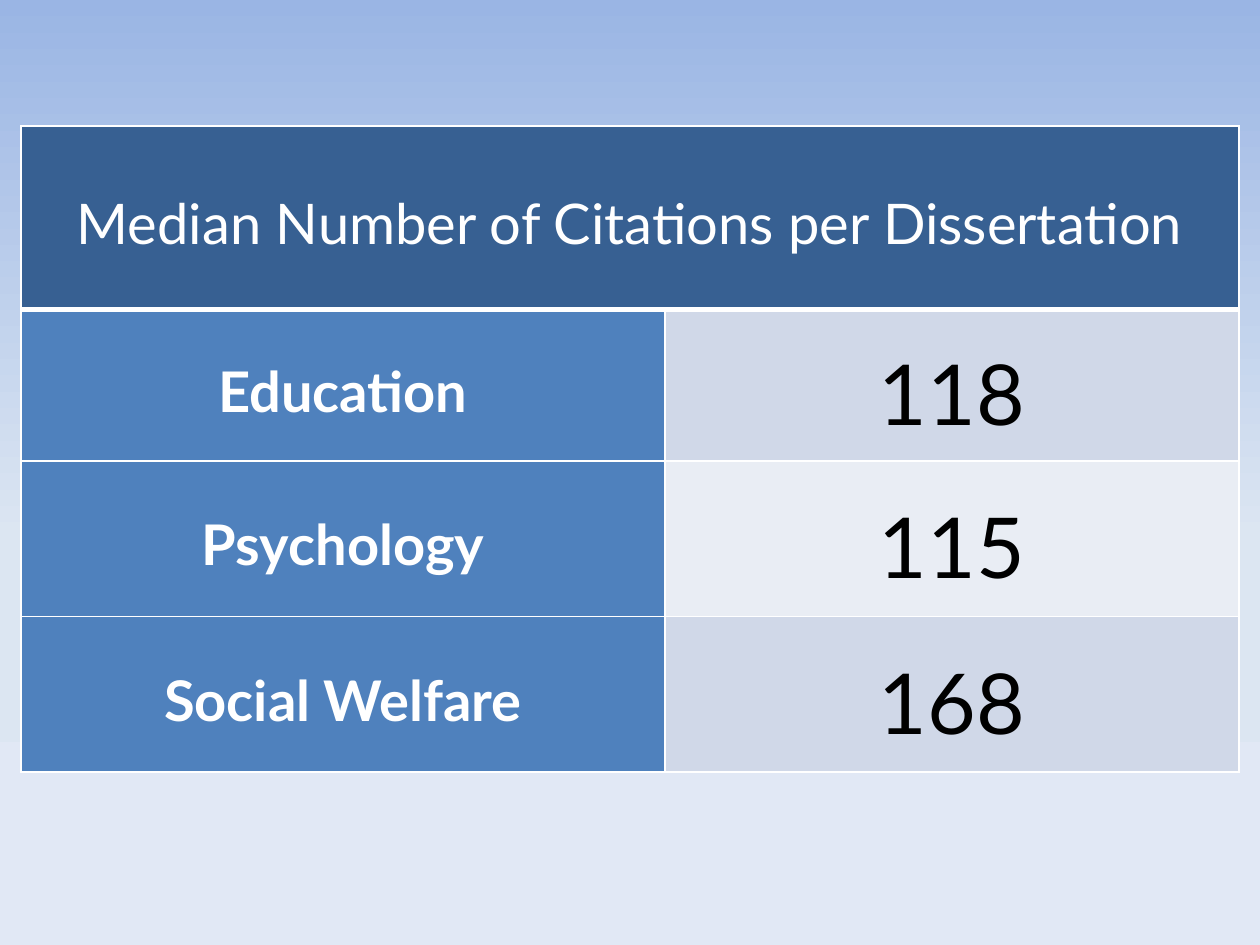
"""Build a slide with a table of median citations per dissertation."""
from lxml import etree
from pptx import Presentation
from pptx.dml.color import RGBColor
from pptx.enum import text
from pptx.oxml import ns
from pptx.util import Pt

WHITE = RGBColor(0xFF, 0xFF, 0xFF)
BLACK = RGBColor(0, 0, 0)
NAVY = RGBColor(0x37, 0x60, 0x92)
BLUE = RGBColor(0x4F, 0x81, 0xBD)
BANDS = RGBColor(0xD0, 0xD8, 0xE8), RGBColor(0xE9, 0xED, 0xF4)
SKY = [(0, RGBColor(0x9A, 0xB5, 0xE4)), (57, RGBColor(0xDC, 0xE6, 0xF2)),
       (100, RGBColor(0xE1, 0xE8, 0xF5))]

TITLE = "Median Number of Citations per Dissertation"
MEDIANS = [("Education", "118"), ("Psychology", "115"), ("Social Welfare", "168")]
COLS = [368, 328]
ROWS = [104.9, 86.6, 88.9, 88.9]

CELL = dict(vertical_anchor=text.MSO_ANCHOR.MIDDLE, margin_left=Pt(5),
            margin_right=Pt(5), margin_top=0, margin_bottom=0)
PARA = dict(alignment=text.PP_ALIGN.CENTER, line_spacing=1.15)
HEAD = dict(name="Lato", size=Pt(32), bold=False)
LABEL = dict(HEAD, bold=True)
VALUE = dict(HEAD, size=Pt(48))


def set_all(obj, fmt):
    for name, value in fmt.items():
        setattr(obj, name, value)


def add_color(parent, color):
    fill = etree.SubElement(parent, ns.qn("a:solidFill"))
    etree.SubElement(fill, ns.qn("a:srgbClr"), val=str(color))


def set_background(s, stops):
    fill = s.background.fill
    fill.gradient()
    fill.gradient_angle = 270
    gs_list = s.element.find(".//" + ns.qn("a:gsLst"))
    for gs in list(gs_list):
        gs_list.remove(gs)
    for pos, color in stops:
        gs = etree.SubElement(gs_list, ns.qn("a:gs"), pos=str(pos * 1000))
        etree.SubElement(gs, ns.qn("a:srgbClr"), val=str(color))


def set_borders(cell, top=1, bottom=1):
    tc_pr = cell._tc.get_or_add_tcPr()
    for side, width in dict(L=1, R=1, T=top, B=bottom).items():
        ln = etree.SubElement(tc_pr, ns.qn("a:ln" + side), w=str(Pt(width)))
        add_color(ln, WHITE)


def fill_cell(cell, words, fill, color, font):
    set_all(cell, CELL)
    cell.fill.solid()
    cell.fill.fore_color.rgb = fill
    p = cell.text_frame.paragraphs[0]
    set_all(p, PARA)
    r = p.add_run()
    r.text = words
    set_all(r.font, font)
    r.font.color.rgb = color


def add_median_table(s):
    table = s.shapes.add_table(len(ROWS), len(COLS), Pt(12), Pt(72),
                               Pt(sum(COLS)), Pt(sum(ROWS))).table
    for col, width in zip(table.columns, COLS):
        col.width = Pt(width)
    for i, (row, height) in enumerate(zip(table.rows, ROWS)):
        row.height = Pt(height)
        for cell in row.cells:
            set_borders(cell, top=3 if i == 1 else 1, bottom=3 if i == 0 else 1)
    table.cell(0, 0).merge(table.cell(0, 1))
    fill_cell(table.cell(0, 0), TITLE, NAVY, WHITE, HEAD)
    for i, (field, median) in enumerate(MEDIANS):
        fill_cell(table.cell(i + 1, 0), field, BLUE, WHITE, LABEL)
        fill_cell(table.cell(i + 1, 1), median, BANDS[i % 2], BLACK, VALUE)


def main():
    prs = Presentation()
    set_all(prs, dict(slide_width=Pt(720), slide_height=Pt(540)))
    s = prs.slides.add_slide(prs.slide_layouts[6])
    set_background(s, SKY)
    add_median_table(s)
    prs.save("out.pptx")


if __name__ == "__main__":
    main()
